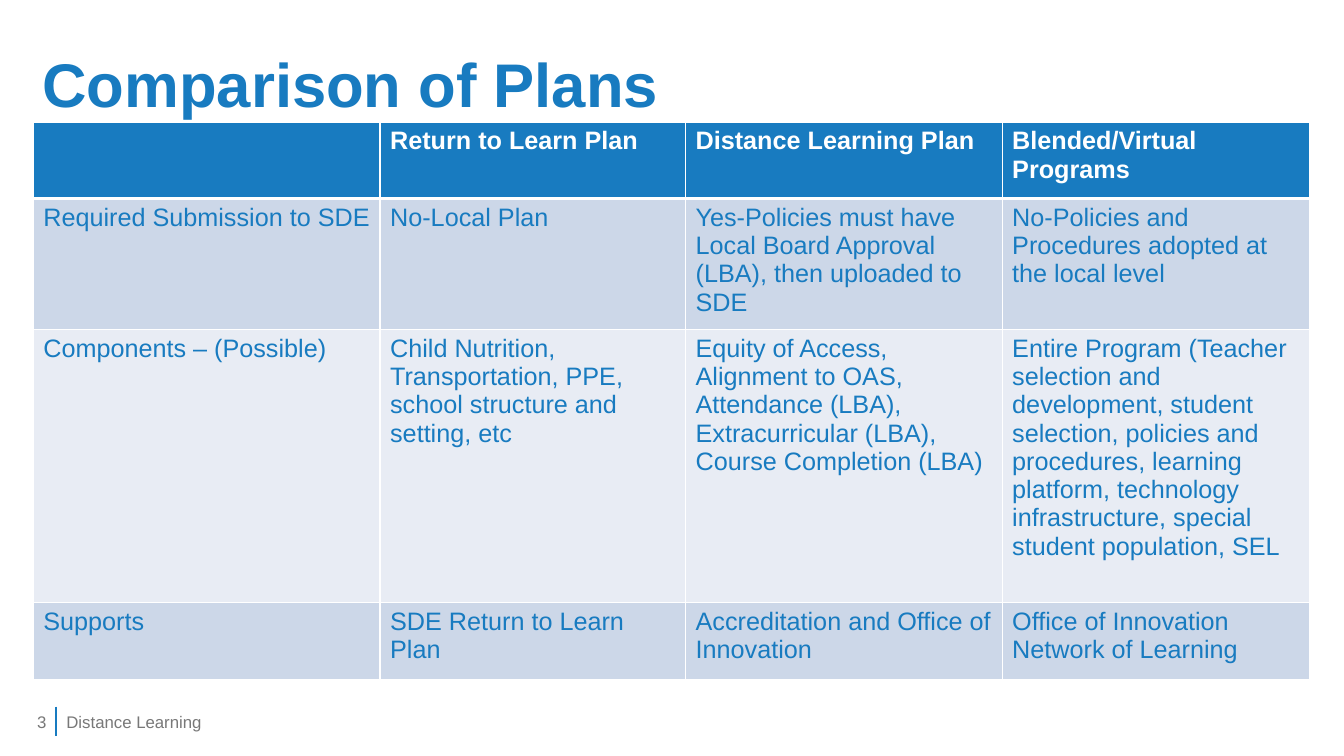
import pptx
import pptx.util
import pptx.dml.color
import pptx.enum.shapes
import pptx.enum.text
import pptx.oxml.ns
from lxml import etree

Inches = pptx.util.Inches
ALIGN = pptx.enum.text.PP_ALIGN
ANCHOR = pptx.enum.text.MSO_ANCHOR

# Content
TITLE = "Comparison of Plans"
FOOTER = "Distance Learning"
PAGE_NUMBER = "3"
# A line break inside a cell starts a new paragraph.
PLANS = [
    ["", "Return to Learn Plan", "Distance Learning Plan", "Blended/Virtual Programs"],
    ["Required Submission to SDE",
     "No-Local Plan",
     "Yes-Policies must have Local Board Approval (LBA), then uploaded to SDE",
     "No-Policies and Procedures adopted at the local level"],
    ["Components – (Possible)",
     "Child Nutrition, Transportation, PPE, school structure and setting, etc",
     "Equity of Access, Alignment to OAS, Attendance (LBA), Extracurricular (LBA),\n"
     "Course Completion (LBA)",
     "Entire Program (Teacher selection and development, student selection, policies "
     "and procedures, learning platform, technology infrastructure, special student "
     "population, SEL"],
    ["Supports",
     "SDE Return to Learn Plan",
     "Accreditation and Office of Innovation",
     "Office of Innovation Network of Learning"],
]
COLUMN_WIDTHS = [3.44, 3.03, 3.14, 3.05]
ROW_HEIGHTS = [0.76, 1.21, 2.71, 0.76]
COLORS = {
    "blue": "187BC0",
    "white": "FFFFFF",
    "gray": "787878",
    "band_dark": "CCD7E8",
    "band_light": "E8ECF4",
}


def rgb(name):
    return pptx.dml.color.RGBColor.from_string(COLORS[name])


def write(frame, text, size=18, color="blue", bold=False, align=ALIGN.LEFT,
          anchor=ANCHOR.MIDDLE, spacing=None):
    frame.word_wrap = True
    frame.vertical_anchor = anchor
    frame.text = text
    for paragraph in frame.paragraphs:
        paragraph.alignment = align
        paragraph.line_spacing = spacing
        paragraph.font.name = "Arial"
        paragraph.font.size = pptx.util.Pt(size)
        paragraph.font.bold = bold
        paragraph.font.color.rgb = rgb(color)


def add_border(cell, side, points):
    qn = pptx.oxml.ns.qn
    properties = cell._tc.get_or_add_tcPr()
    line = etree.SubElement(properties, qn("a:ln" + side), w=str(pptx.util.Pt(points)))
    fill = etree.SubElement(line, qn("a:solidFill"))
    etree.SubElement(fill, qn("a:srgbClr"), val=COLORS["white"])


def main():
    presentation = pptx.Presentation()
    presentation.slide_width = Inches(13.33)
    presentation.slide_height = Inches(7.5)
    slide = presentation.slides.add_slide(presentation.slide_layouts[5])

    # Title
    title = slide.shapes.title
    title.left, title.top = Inches(0.32), Inches(0.14)
    title.width, title.height = Inches(12.65), Inches(1.45)
    write(title.text_frame, TITLE, size=44, bold=True, spacing=0.9)

    # Footer: page number, divider and text
    divider_x = 0.56
    for text, left, width, align in [
        (FOOTER, divider_x, 6.52, ALIGN.LEFT),
        (PAGE_NUMBER, 0, divider_x, ALIGN.RIGHT),
    ]:
        box = slide.shapes.add_textbox(Inches(left), Inches(6.96), Inches(width), Inches(0.4))
        write(box.text_frame, text, size=12, color="gray", align=align)
    divider = slide.shapes.add_connector(
        pptx.enum.shapes.MSO_CONNECTOR.STRAIGHT,
        Inches(divider_x), Inches(7.01), Inches(divider_x), Inches(7.3))
    divider.line.color.rgb = rgb("blue")
    divider.line.width = pptx.util.Pt(1.5)
    etree.SubElement(divider._element.spPr, pptx.oxml.ns.qn("a:effectLst"))

    # Plans table
    table = slide.shapes.add_table(
        len(PLANS), len(COLUMN_WIDTHS), Inches(0.33), Inches(1.21),
        Inches(sum(COLUMN_WIDTHS)), Inches(sum(ROW_HEIGHTS))).table
    for column, width in zip(table.columns, COLUMN_WIDTHS):
        column.width = Inches(width)
    for row, height in zip(table.rows, ROW_HEIGHTS):
        row.height = Inches(height)

    for row_index, plan_row in enumerate(PLANS):
        is_header = row_index == 0
        band = "blue" if is_header else "band_dark" if row_index % 2 else "band_light"
        for column_index, text in enumerate(plan_row):
            cell = table.cell(row_index, column_index)
            for side in "LRTB":
                thick = (is_header and side == "B") or (row_index == 1 and side == "T")
                add_border(cell, side, 3 if thick else 1)
            cell.fill.solid()
            cell.fill.fore_color.rgb = rgb(band)
            write(cell.text_frame, text, color="white" if is_header else "blue",
                  bold=is_header, anchor=ANCHOR.TOP)

    presentation.save("out.pptx")


if __name__ == "__main__":
    main()
